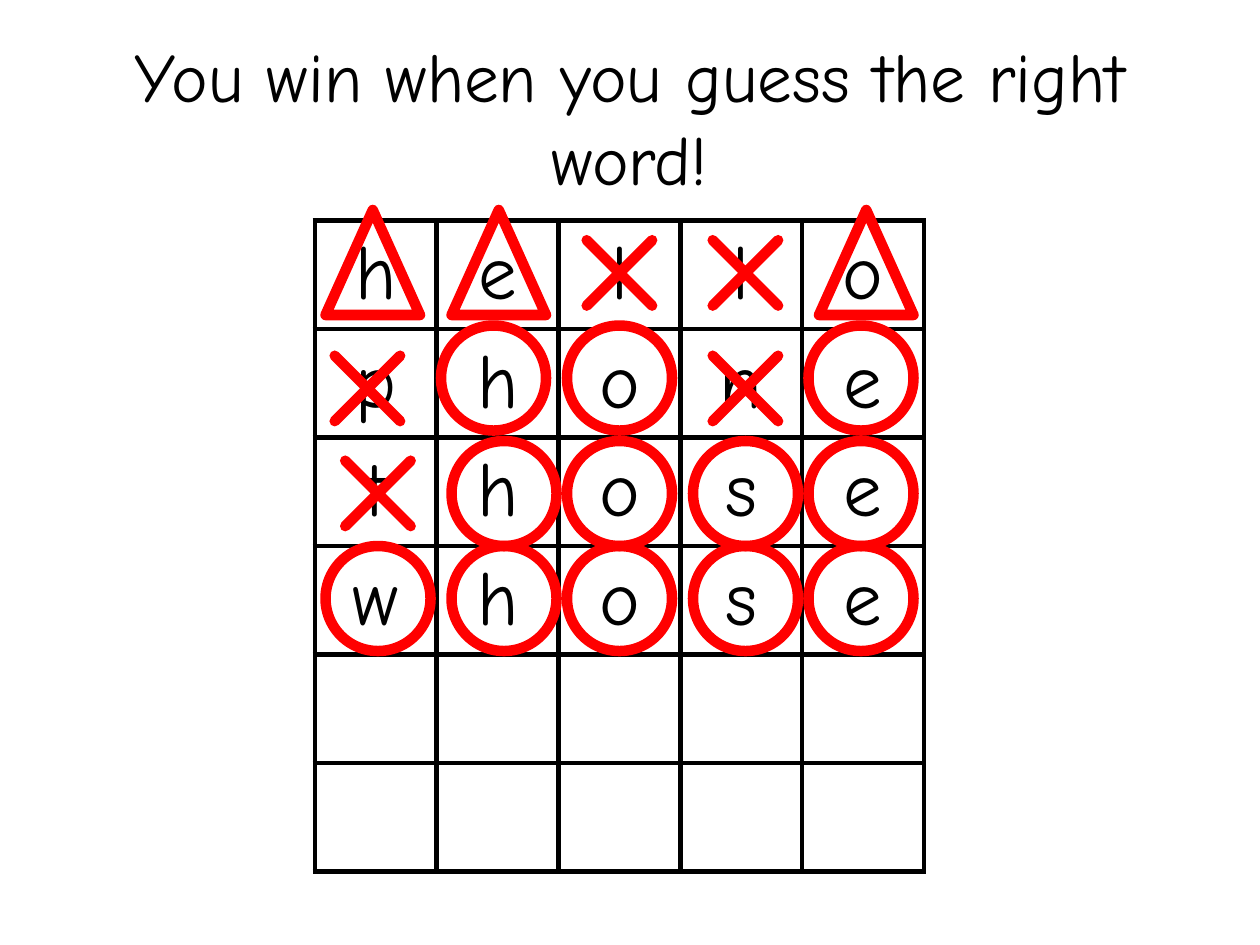
from lxml import etree
from pptx import Presentation
from pptx import util as u
from pptx.dml.color import RGBColor
from pptx.enum import shapes, text
from pptx.oxml import ns

UNIT = u.Inches(1) / 12
PAGE_COLUMNS, PAGE_ROWS = 120, 90
FONT, INK, RED, BLUE = "Comic Neue", "000000", "FF0000", "4F81BD"
WORDS = ["hello", "phone", "those", "whose", "", ""]
LETTERS = 5
KINDS = {
    "triangle": (shapes.MSO_SHAPE.ISOSCELES_TRIANGLE, 9, 10),
    "cross": (shapes.MSO_SHAPE.MATH_MULTIPLY, 12, 12),
    "circle": (shapes.MSO_SHAPE.OVAL, 10, 10),
}
MARKS = [
    ("triangle", -1, [1, 13, 48]),
    ("cross", -1, [23, 35]),
    ("circle", 10, [12, 24, 47]),
    ("cross", 10, [35, -1]),
    ("circle", 21, [13, 24, 36, 47]),
    ("cross", 20, [0]),
    ("circle", 31, [13, 24, 36, 47, 1]),
]


def color(value):
    """Turn a hex string into a colour."""
    return RGBColor.from_string(value)


def place(*box):
    """Convert grid columns and rows to slide lengths."""
    return [u.Emu(round(length * UNIT)) for length in box]


def write(frame, words, size=44, ink=INK, align=text.PP_ALIGN.CENTER):
    """Write one formatted paragraph in a text frame."""
    para = frame.paragraphs[0]
    para.alignment = align
    span = para.add_run()
    span.text = words
    span.font.name, span.font.size = FONT, u.Pt(size)
    span.font.color.rgb = color(ink)


def add_borders(cell, ink=INK, width=3):
    """Draw a solid line on all four sides of a cell."""
    properties = cell._tc.get_or_add_tcPr()
    for side in ("a:lnL", "a:lnR", "a:lnT", "a:lnB"):
        line = etree.SubElement(properties, ns.qn(side), w=str(u.Pt(width)))
        fill = etree.SubElement(line, ns.qn("a:solidFill"))
        etree.SubElement(fill, ns.qn("a:srgbClr"), val=ink)


def add_title(page, box):
    """Place the centred heading."""
    frame = page.shapes.add_textbox(*place(*box)).text_frame
    frame.word_wrap = True
    frame.vertical_anchor = text.MSO_ANCHOR.MIDDLE
    write(frame, "You win when you guess the right word!", size=39.6)


def add_guesses(page, box):
    """Place the table of guessed words, one letter to a cell."""
    table = page.shapes.add_table(len(WORDS), LETTERS, *place(*box)).table
    table.first_row = table.horz_banding = False
    for row, word in enumerate(WORDS):
        for column in range(LETTERS):
            cell = table.cell(row, column)
            add_borders(cell)
            cell.fill.background()
            cell.vertical_anchor = text.MSO_ANCHOR.MIDDLE
            if word:
                write(cell.text_frame, word[column])


def add_mark(page, kind, left, top):
    """Place one red triangle, cross or circle."""
    preset, width, height = KINDS[kind]
    mark = page.shapes.add_shape(preset, *place(left, top, width, height))
    mark.shadow.inherit = False
    mark.line.color.rgb = color(RED)
    mark.line.width = u.Pt(6)
    if kind == "cross":
        mark.adjustments[0] = 0
        mark.fill.solid()
        mark.fill.fore_color.rgb = color(BLUE)
    else:
        mark.fill.background()


def add_marks(page, box):
    """Place the score marks relative to the table's box."""
    left, top = box[:2]
    for kind, row, columns in MARKS:
        for column in columns:
            add_mark(page, kind, left + column, top + row)


def main():
    """Build and save the deck."""
    deck = Presentation()
    deck.slide_width, deck.slide_height = place(PAGE_COLUMNS, PAGE_ROWS)
    page = deck.slides.add_slide(deck.slide_layouts[6])
    board = (30, 21, 58, 62)
    add_title(page, (6, 3.6, 108, 15))
    add_guesses(page, board)
    add_marks(page, board)
    deck.save("out.pptx")


if __name__ == "__main__":
    main()
